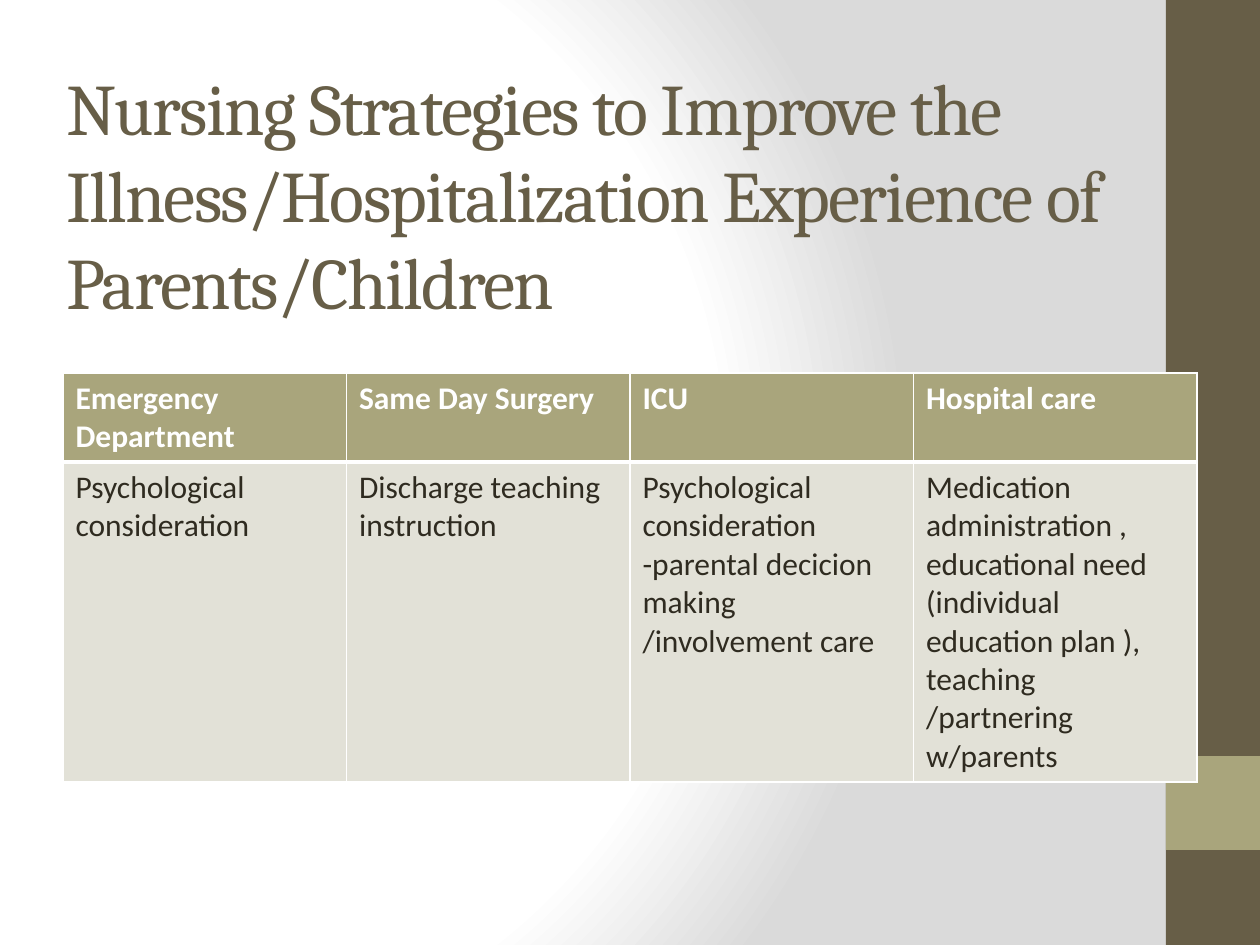
"""Build a slide on nursing strategies with a four-column table of care settings."""
from pptx import Presentation
from pptx.dml.color import RGBColor
from pptx.enum.shapes import MSO_SHAPE as Shape
from pptx.enum.text import MSO_ANCHOR as Anchor
from pptx.oxml import parse_xml
from pptx.oxml.ns import nsdecls, qn
from pptx.util import Pt

EMU_PER_PX = 914400 / 126
WHITE = RGBColor(0xFF, 0xFF, 0xFF)
GREY = RGBColor(0xDA, 0xDA, 0xDA)
BROWN = RGBColor(0x67, 0x5E, 0x47)
OLIVE = RGBColor(0xA9, 0xA5, 0x7C)
PALE = RGBColor(0xE2, 0xE1, 0xD7)
INK = RGBColor(0x2F, 0x2B, 0x20)

TITLE = "Nursing Strategies to Improve the Illness/Hospitalization Experience of Parents/Children"
CARE_ROWS = [
    ["Emergency Department", "Same Day Surgery", "ICU", "Hospital care"],
    [
        "Psychological consideration",
        "Discharge teaching instruction",
        "Psychological consideration\n-parental decicion making /involvement care",
        "Medication administration , educational need (individual education plan ), "
        "teaching /partnering w/parents",
    ],
]
ROW_STYLES = [
    {"height": 89, "fill": OLIVE, "borders": {"L": 1, "R": 1, "T": 1, "B": 3},
     "font": {"name": "Calibri", "size": Pt(18), "bold": True}, "color": WHITE},
    {"height": 320, "fill": PALE, "borders": {"L": 1, "R": 1, "T": 3, "B": 1},
     "font": {"name": "Calibri", "size": Pt(18), "bold": False}, "color": INK},
]


def px(*lengths):
    return [round(length * EMU_PER_PX) for length in lengths]


def style_font(font, values, color):
    for name, value in values.items():
        setattr(font, name, value)
    font.color.rgb = color


presentation = Presentation()
presentation.slide_width, presentation.slide_height = px(1260, 945)
slide = presentation.slides.add_slide(presentation.slide_layouts[6])

slide.background.fill.solid()
background = slide.element.find(".//" + qn("p:bgPr"))
stops = "".join(
    f'<a:gs pos="{percent * 1000}"><a:srgbClr val="{color}"/></a:gs>'
    for percent, color in [(0, WHITE), (75, WHITE), (100, GREY)]
)
background.replace(background[0], parse_xml(
    f'<a:gradFill {nsdecls("a")} rotWithShape="1"><a:gsLst>{stops}</a:gsLst>'
    '<a:path path="circle"><a:fillToRect l="20000" t="50000" r="100000" b="50000"/></a:path>'
    "</a:gradFill>"
))

for top, height, color in [(0, 945, BROWN), (756, 94, OLIVE)]:
    band = slide.shapes.add_shape(Shape.RECTANGLE, *px(1166, top, 94, height))
    band.shadow.inherit = False
    band.fill.solid()
    band.fill.fore_color.rgb = color
    band.line.fill.background()

title_frame = slide.shapes.add_textbox(*px(54, 86, 1134, 215)).text_frame
title_frame.word_wrap = True
title_frame.vertical_anchor = Anchor.MIDDLE
title_run = title_frame.paragraphs[0].add_run()
title_run.text = TITLE
style_font(title_run.font, {"name": "Cambria", "size": Pt(41.4)}, BROWN)
title_run.font._element.set("spc", "-100")

table_height = sum(style["height"] for style in ROW_STYLES)
table = slide.shapes.add_table(2, 4, *px(63, 373, 1134, table_height)).table
for row, texts, style in zip(table.rows, CARE_ROWS, ROW_STYLES):
    row.height = px(style["height"])[0]
    for cell, text in zip(row.cells, texts):
        cell.text = text
        for paragraph in cell.text_frame.paragraphs:
            for run in paragraph.runs:
                style_font(run.font, style["font"], style["color"])
        properties = cell._tc.get_or_add_tcPr()
        for side, points in style["borders"].items():
            properties.append(parse_xml(
                f'<a:ln{side} {nsdecls("a")} w="{Pt(points)}"><a:solidFill>'
                f'<a:srgbClr val="{WHITE}"/></a:solidFill></a:ln{side}>'
            ))
        cell.fill.solid()
        cell.fill.fore_color.rgb = style["fill"]

presentation.save("out.pptx")
